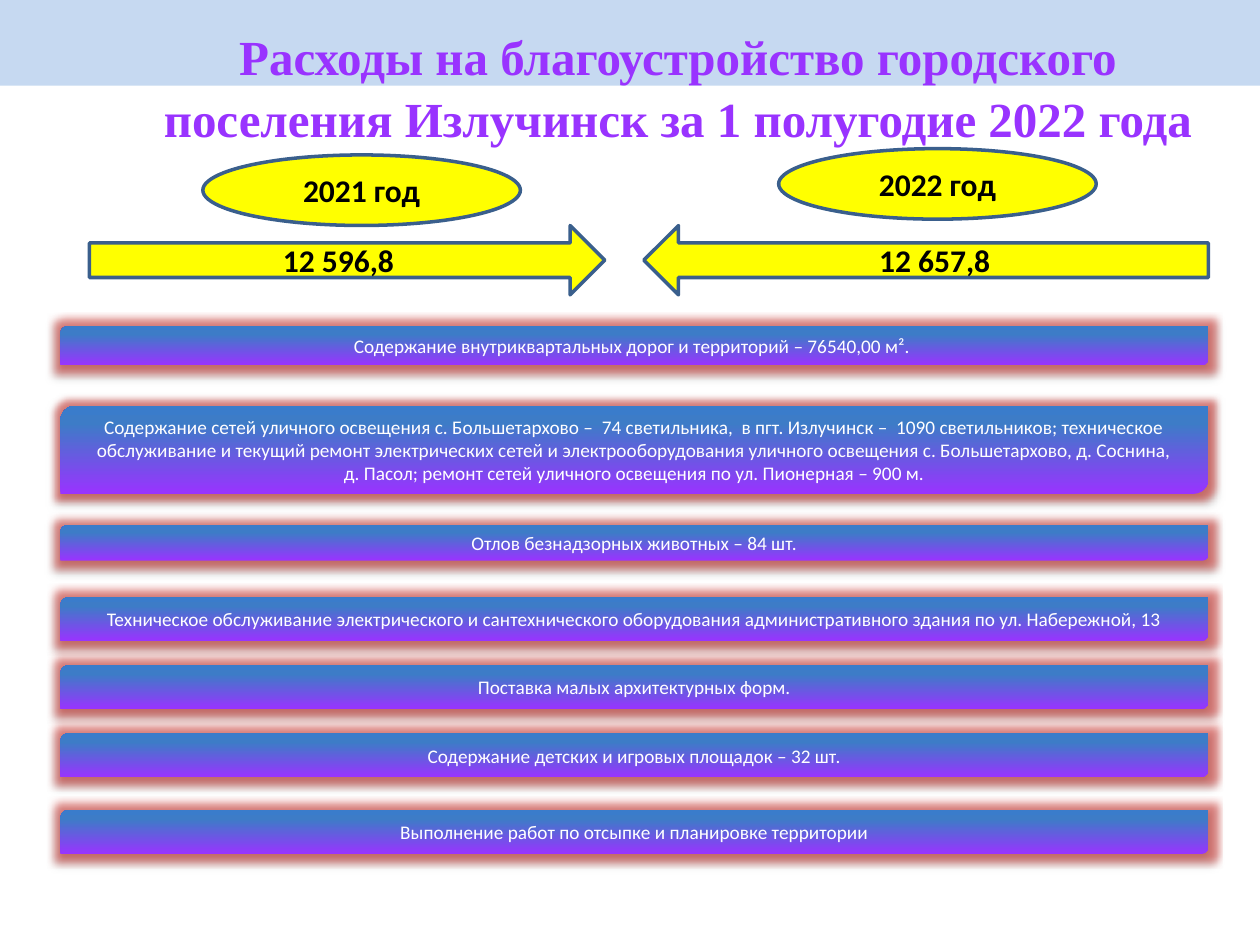
from copy import deepcopy

from lxml.etree import fromstring
from pptx import Presentation
from pptx.dml.color import RGBColor
from pptx.enum.shapes import MSO_SHAPE
from pptx.enum.text import MSO_ANCHOR, PP_ALIGN
from pptx.oxml.ns import qn
from pptx.util import Inches, Pt

BAR_EFFECTS = """
<a:effectLst xmlns:a="http://schemas.openxmlformats.org/drawingml/2006/main">
  <a:glow rad="101600"><a:srgbClr val="D64540"><a:alpha val="60000"/></a:srgbClr></a:glow>
  <a:outerShdw blurRad="39370" dist="22860" dir="5400000" rotWithShape="0">
    <a:srgbClr val="000000"><a:alpha val="35000"/></a:srgbClr>
  </a:outerShdw>
</a:effectLst>"""


def rgb(code):
    return RGBColor.from_string(code)


def write(shape, text, font, size, color, bold):
    frame = shape.text_frame
    frame.word_wrap = True
    frame.vertical_anchor = MSO_ANCHOR.MIDDLE
    frame.text = text
    paragraph = frame.paragraphs[0]
    paragraph.alignment = PP_ALIGN.CENTER
    paragraph.font.name = font
    paragraph.font.size = Pt(size)
    paragraph.font.bold = bold
    paragraph.font.color.rgb = rgb(color)


prs = Presentation()
prs.slide_width, prs.slide_height = Inches(10), Inches(7.5)
slide = prs.slides.add_slide(prs.slide_layouts[5])
shapes = slide.shapes

header = shapes.add_shape(MSO_SHAPE.RECTANGLE, 0, 0, Inches(10), Inches(0.68))
header.shadow.inherit = False
header.fill.solid()
header.fill.fore_color.rgb = rgb("C6D9F1")
header.line.fill.background()
shapes.title._element.addprevious(header._element)

title = shapes.title
title.left, title.top = Inches(0.88), Inches(0.14)
title.width, title.height = Inches(9), Inches(1.25)
write(title, "Расходы на благоустройство городского поселения Излучинск за 1 полугодие 2022 года",
      "Times New Roman", 28, "9933FF", True)
title.text_frame.vertical_anchor = MSO_ANCHOR.TOP
title.text_frame.paragraphs[0].line_spacing = 1.05

years = [
    (MSO_SHAPE.RIGHT_ARROW, 0.71, 1.79, 4.09, 0.55, "12 596,8", False),
    (MSO_SHAPE.RIGHT_ARROW, 5.11, 1.79, 4.48, 0.55, "12 657,8", True),
    (MSO_SHAPE.OVAL, 1.61, 1.23, 2.52, 0.56, "2021 год", False),
    (MSO_SHAPE.OVAL, 6.18, 1.18, 2.52, 0.56, "2022 год", False),
]
for kind, left, top, width, height, text, flipped in years:
    sign = shapes.add_shape(kind, Inches(left), Inches(top), Inches(width), Inches(height))
    sign.shadow.inherit = False
    sign.fill.solid()
    sign.fill.fore_color.rgb = rgb("FFFF00")
    sign.line.color.rgb = rgb("3A5F8C")
    sign.line.width = Pt(2)
    if flipped:
        sign._element.spPr.find(qn("a:xfrm")).set("flipH", "1")
    write(sign, text, "Calibri", 18, "000000", True)

works = [
    (2.59, 0.31, "Содержание внутриквартальных дорог и территорий – 76540,00 м². "),
    (3.22, 0.7, "Содержание сетей уличного освещения с. Большетархово –  74 светильника,  "
                "в пгт. Излучинск –  1090 светильников; техническое обслуживание и текущий ремонт "
                "электрических сетей и электрооборудования уличного освещения с. Большетархово, "
                "д. Соснина,\vд. Пасол; ремонт сетей уличного освещения по ул. Пионерная – 900 м."),
    (4.17, 0.28, "Отлов безнадзорных животных – 84 шт."),
    (4.74, 0.35, "Техническое обслуживание электрического и сантехнического оборудования "
                 "административного здания по ул. Набережной, 13"),
    (5.28, 0.35, "Поставка малых архитектурных форм."),
    (5.82, 0.35, "Содержание детских и игровых площадок – 32 шт."),
    (6.43, 0.35, "Выполнение работ по отсыпке и планировке территории"),
]
for top, height, text in works:
    bar = shapes.add_shape(MSO_SHAPE.ROUND_2_DIAG_RECTANGLE,
                           Inches(0.48), Inches(top), Inches(9.11), Inches(height))
    bar.fill.gradient()
    bar.fill.gradient_angle = 90
    stop_list = bar._element.spPr.find(".//" + qn("a:gsLst"))
    stop_list.insert(1, deepcopy(stop_list[0]))
    gradient = [(0, "9933FF"), (0.8, "3D7CC7"), (1, "3A7CCB")]
    for stop, (position, color) in zip(bar.fill.gradient_stops, gradient):
        stop.position = position
        stop.color.rgb = rgb(color)
    bar.line.fill.background()
    bar._element.spPr.append(fromstring(BAR_EFFECTS))
    write(bar, text, "Calibri", 11, "FFFFFF", False)

prs.save("out.pptx")
